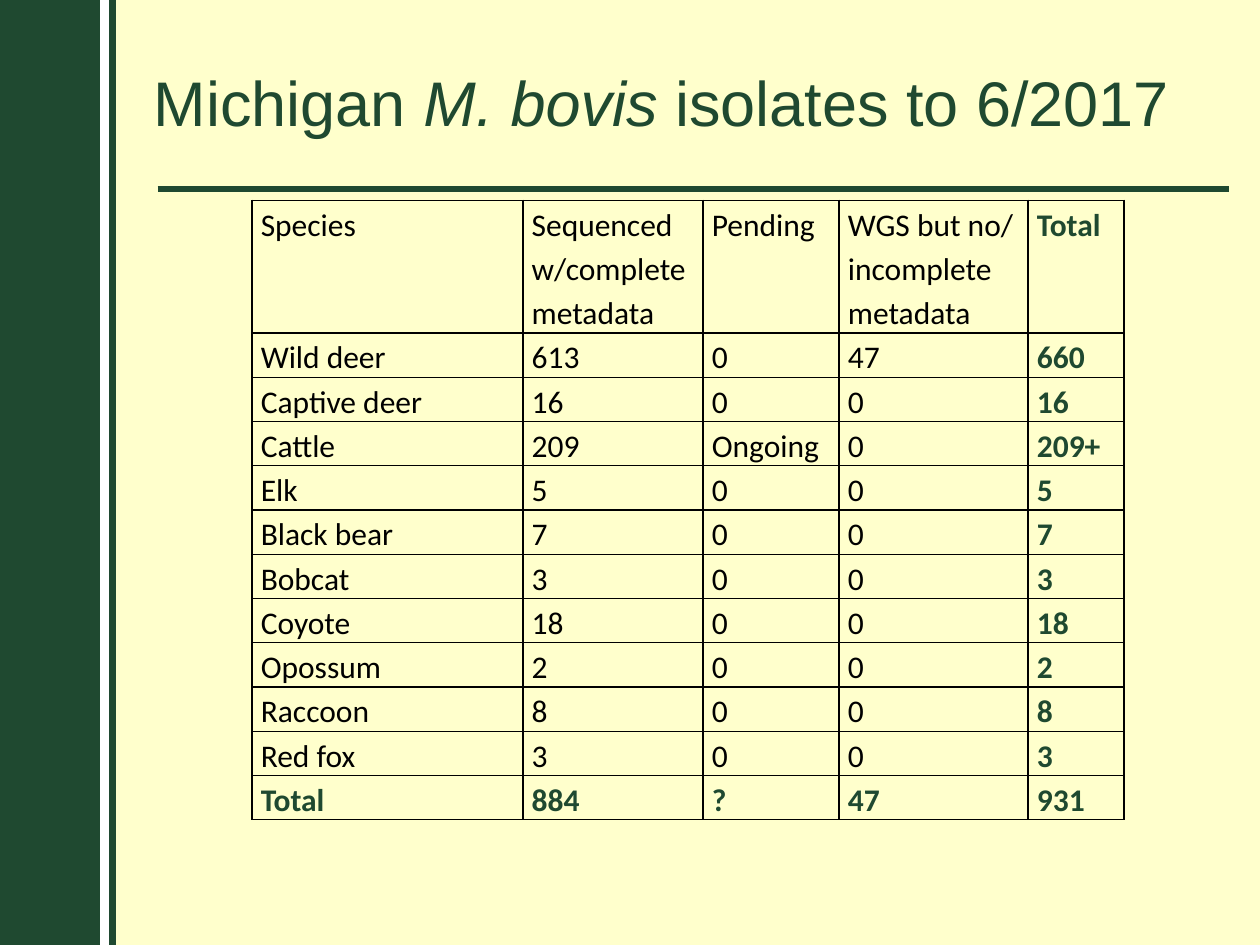
from lxml.etree import SubElement
from pptx import Presentation
from pptx.dml.color import RGBColor
from pptx.enum.shapes import MSO_CONNECTOR, MSO_SHAPE
from pptx.enum.text import MSO_ANCHOR, PP_ALIGN
from pptx.oxml import parse_xml
from pptx.oxml.ns import nsdecls, qn
from pptx.util import Inches, Pt

COLORS = {"green": "1F4930", "cream": "FFFFCC", "white": "FFFFFF", "black": "000000"}
WIDTH, HEIGHT = 10, 7.5

TITLE = [("Michigan ", False), ("M. bovis ", True), ("isolates to 6/2017", False)]
ISOLATES = [
    ("Species", "Sequenced w/complete metadata", "Pending",
     "WGS but no/ incomplete metadata", "Total"),
    ("Wild deer", "613", "0", "47", "660"),
    ("Captive deer", "16", "0", "0", "16"),
    ("Cattle", "209", "Ongoing", "0", "209+"),
    ("Elk", "5", "0", "0", "5"),
    ("Black bear", "7", "0", "0", "7"),
    ("Bobcat", "3", "0", "0", "3"),
    ("Coyote", "18", "0", "0", "18"),
    ("Opossum", "2", "0", "0", "2"),
    ("Raccoon", "8", "0", "0", "8"),
    ("Red fox", "3", "0", "0", "3"),
    ("Total", "884", "?", "47", "931"),
]
COLUMN_WIDTHS = [2.15, 1.43, 1.08, 1.5, 0.76]
HEADER_HEIGHT, ROW_HEIGHT = 1.05, 0.35

PANELS = [(0.75, WIDTH - 0.75, "cream"), (0, 0.92, "green")]  # left, width, colour
RULES = [((0.83, 0), (0.83, HEIGHT), "white", 5),
         ((1.25, 1.5), (9.75, 1.5), "green", 3)]


def rgb(name):
    return RGBColor.from_string(COLORS[name])


def add_panel(slide, left, width, color):
    panel = slide.shapes.add_shape(
        MSO_SHAPE.RECTANGLE, Inches(left), 0, Inches(width), Inches(HEIGHT))
    panel.shadow.inherit = False
    panel.fill.solid()
    panel.fill.fore_color.rgb = rgb(color)
    panel.line.fill.background()


def add_rule(slide, start, end, color, weight):
    rule = slide.shapes.add_connector(
        MSO_CONNECTOR.STRAIGHT, *(Inches(value) for value in start + end))
    rule.line.color.rgb = rgb(color)
    rule.line.width = Pt(weight)
    SubElement(rule._element.spPr, qn("a:effectLst"))


def set_title(slide):
    title = slide.shapes.title
    title.left, title.top = Inches(0.75), Inches(0.33)
    title.width, title.height = Inches(9), Inches(0.95)
    title.text_frame.vertical_anchor = MSO_ANCHOR.MIDDLE
    paragraph = title.text_frame.paragraphs[0]
    paragraph.alignment = PP_ALIGN.CENTER
    for words, italic in TITLE:
        run = paragraph.add_run()
        run.text = words
        run.font.italic = italic
        run.font.name, run.font.size = "Arial", Pt(36)
        run.font.color.rgb = rgb("green")
    slide.shapes._spTree.append(title._element)  # in front of the panels


def add_borders(cell):
    properties = cell._tc.get_or_add_tcPr()
    for index, side in enumerate("LRTB"):
        properties.insert(index, parse_xml(
            f'<a:ln{side} {nsdecls("a")} w="{Pt(1)}"><a:solidFill>'
            f'<a:srgbClr val="{COLORS["black"]}"/></a:solidFill></a:ln{side}>'))


def fill_cell(cell, words, is_total):
    cell.margin_left = cell.margin_right = Inches(0.07)
    cell.margin_top = cell.margin_bottom = 0
    cell.fill.background()
    add_borders(cell)
    cell.text = words
    paragraph = cell.text_frame.paragraphs[0]
    paragraph.line_spacing = 1.15
    font = paragraph.font
    font.name, font.size, font.bold = "Calibri", Pt(18), is_total
    font.color.rgb = rgb("green" if is_total else "black")


def add_isolates(slide):
    last_row, last_column = len(ISOLATES) - 1, len(COLUMN_WIDTHS) - 1
    heights = [HEADER_HEIGHT] + [ROW_HEIGHT] * last_row
    table = slide.shapes.add_table(
        len(heights), len(COLUMN_WIDTHS), Inches(2), Inches(1.59),
        Inches(sum(COLUMN_WIDTHS)), Inches(sum(heights))).table
    table.first_row = table.horz_banding = False
    for column, width in zip(table.columns, COLUMN_WIDTHS):
        column.width = Inches(width)
    for r, (height, record) in enumerate(zip(heights, ISOLATES)):
        table.rows[r].height = Inches(height)
        for c, words in enumerate(record):
            fill_cell(table.cell(r, c), words, r == last_row or c == last_column)


def main():
    deck = Presentation()
    deck.slide_width, deck.slide_height = Inches(WIDTH), Inches(HEIGHT)
    slide = deck.slides.add_slide(deck.slide_layouts[5])
    for panel in PANELS:
        add_panel(slide, *panel)
    for rule in RULES:
        add_rule(slide, *rule)
    set_title(slide)
    add_isolates(slide)
    deck.save("out.pptx")


if __name__ == "__main__":
    main()
